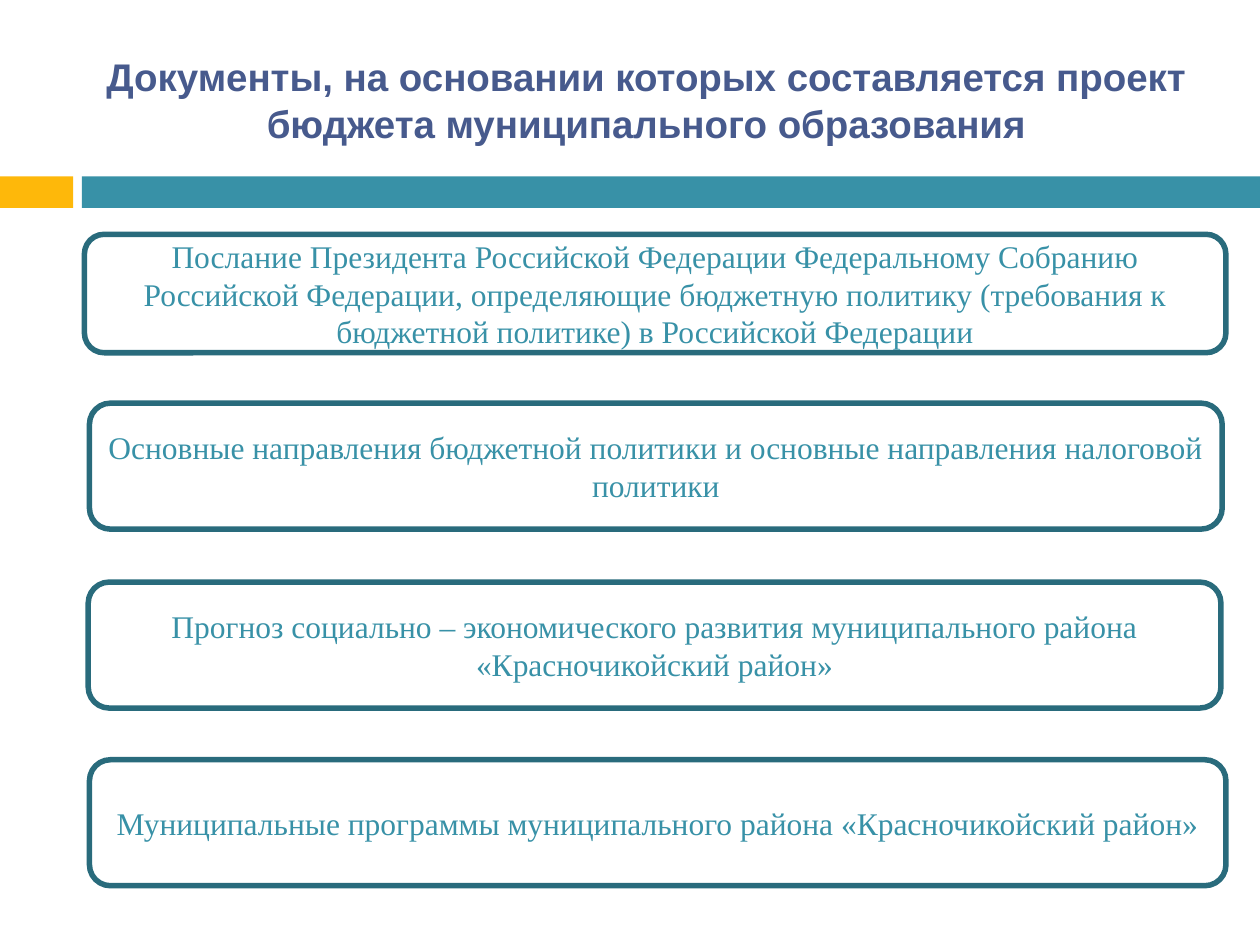
"""Build a slide listing the documents behind a municipal budget draft."""
from pptx import Presentation
from pptx.dml.color import RGBColor
from pptx.enum.shapes import MSO_SHAPE
from pptx.enum.text import MSO_ANCHOR, MSO_AUTO_SIZE, PP_ALIGN
from pptx.util import Inches, Pt

RECTANGLE = MSO_SHAPE.RECTANGLE
ROUNDED = MSO_SHAPE.ROUNDED_RECTANGLE
MIDDLE = MSO_ANCHOR.MIDDLE
CENTER = PP_ALIGN.CENTER
NO_AUTOFIT = MSO_AUTO_SIZE.NONE

TEAL = "3891A7"
DARK_TEAL = "296B7C"
GOLD = "FEB80A"
INDIGO = "475A8D"
WHITE = "FFFFFF"

TITLE = "Документы, на основании которых составляется проект бюджета муниципального образования"
TITLE_BOX = (0.67, 0.25, 8.92, 1.08)
BANDS = [
    ((0, 1.4, 0.58, 0.25), GOLD),
    ((0.65, 1.4, 9.35, 0.25), TEAL),
]
DOCUMENTS = [
    ("Послание Президента Российской Федерации Федеральному Собранию Российской Федерации, "
     "определяющие бюджетную политику (требования к бюджетной политике) в Российской Федерации",
     (0.67, 1.86, 9.06, 0.94)),
    ("Основные направления бюджетной политики и основные направления налоговой политики",
     (0.71, 3.2, 8.99, 1)),
    ("Прогноз социально – экономического развития муниципального района «Красночикойский район»",
     (0.7, 4.62, 8.99, 1)),
    ("Муниципальные программы муниципального района «Красночикойский район»",
     (0.71, 6.03, 9.02, 1)),
]


def paint(color_format, color):
    color_format.rgb = RGBColor.from_string(color)


def add_box(slide, kind, box, fill, line=None):
    shape = slide.shapes.add_shape(kind, *map(Inches, box))
    shape.shadow.inherit = False
    shape.fill.solid()
    paint(shape.fill.fore_color, fill)
    if line:
        paint(shape.line.color, line)
        shape.line.width = Pt(3.15)
    else:
        shape.line.fill.background()
    return shape


def write(shape, text, font_name, size, color, bold=False):
    frame = shape.text_frame
    frame.word_wrap = True
    frame.auto_size = NO_AUTOFIT
    frame.vertical_anchor = MIDDLE
    paragraph = frame.paragraphs[0]
    paragraph.alignment = CENTER
    run = paragraph.add_run()
    run.text = text
    run.font.name = font_name
    run.font.size = Pt(size)
    run.font.bold = bold
    paint(run.font.color, color)


def main():
    presentation = Presentation()
    presentation.slide_width = Inches(10)
    presentation.slide_height = Inches(7.5)
    slide = presentation.slides.add_slide(presentation.slide_layouts[5])
    paint_background = slide.background.fill
    paint_background.solid()
    paint(paint_background.fore_color, WHITE)

    for box, color in BANDS:
        add_box(slide, RECTANGLE, box, color)

    title = slide.shapes.title
    title.left, title.top, title.width, title.height = map(Inches, TITLE_BOX)
    write(title, TITLE, "Arial", 22, INDIGO, bold=True)

    for text, box in DOCUMENTS:
        shape = add_box(slide, ROUNDED, box, WHITE, DARK_TEAL)
        write(shape, text, "Times New Roman", 18, TEAL)

    presentation.save("out.pptx")


if __name__ == "__main__":
    main()
